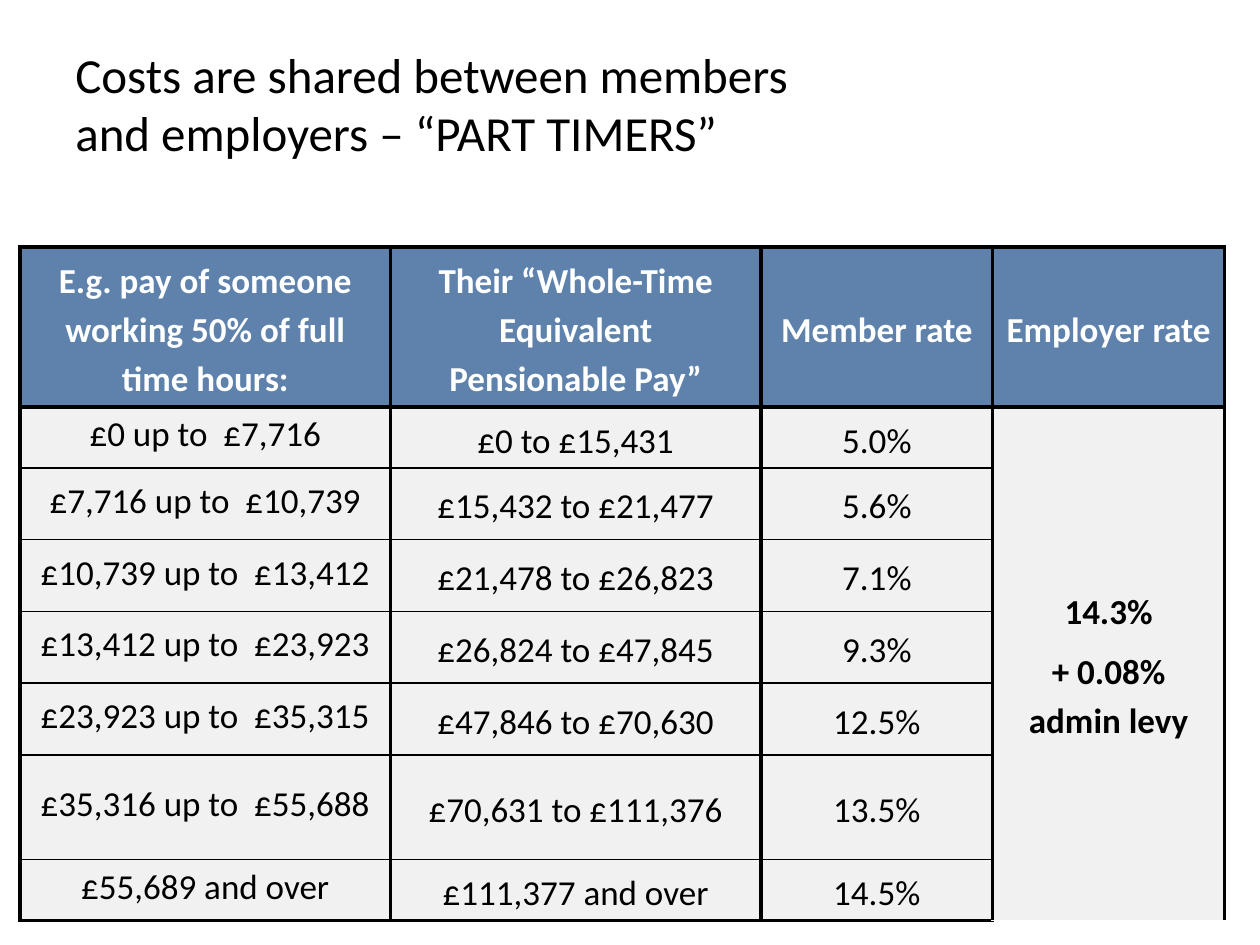
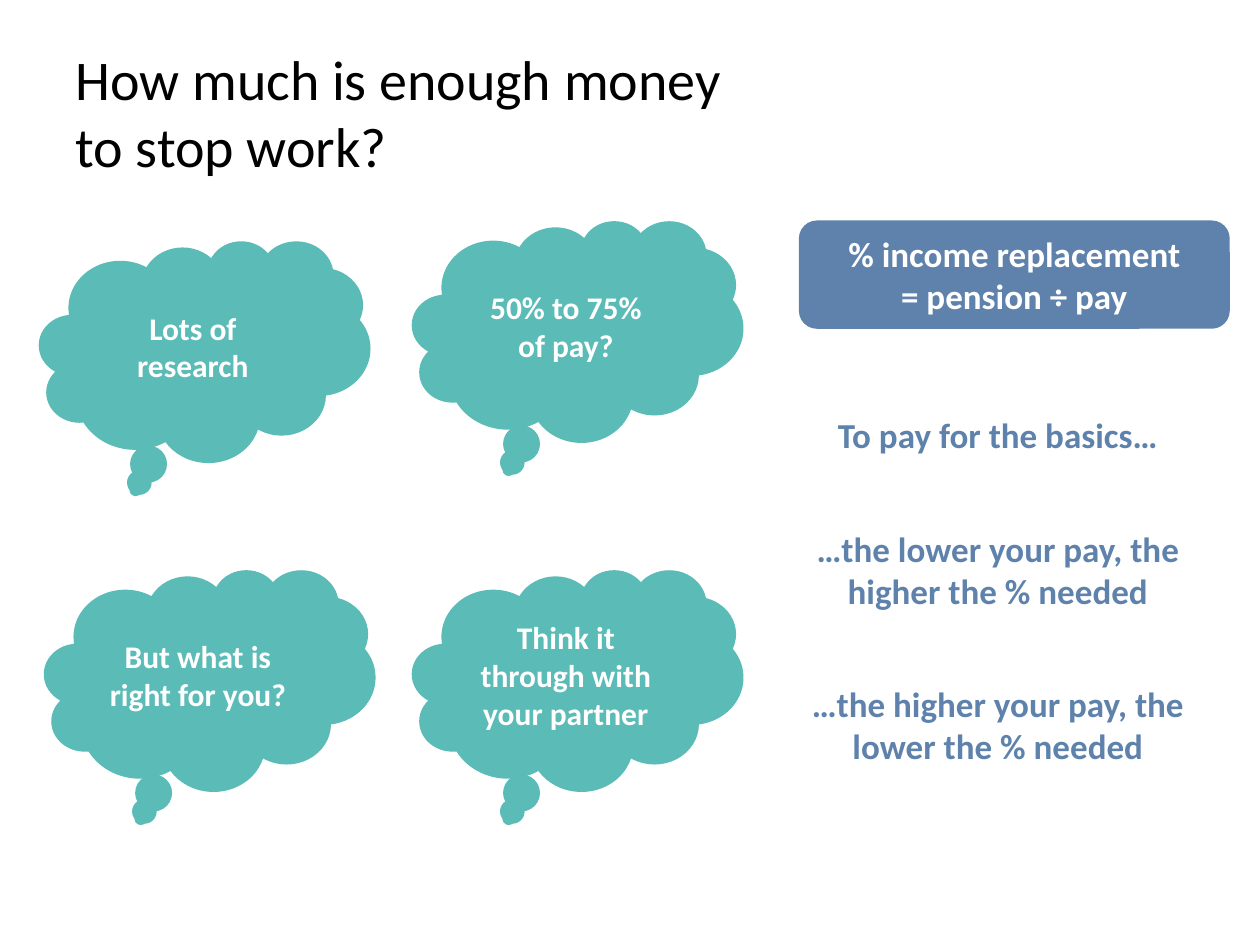
"""Two pension slides: contribution rates for part timers, and income in retirement."""
import pptx
import pptx.dml.color
import pptx.enum.shapes
import pptx.enum.text
import pptx.oxml
import pptx.oxml.ns
import pptx.util

Inches = pptx.util.Inches
Pt = pptx.util.Pt
SHAPES = pptx.enum.shapes.MSO_SHAPE
ALIGN = pptx.enum.text.PP_ALIGN
ANCHOR = pptx.enum.text.MSO_ANCHOR
FIT = pptx.enum.text.MSO_AUTO_SIZE

BLACK, WHITE, BLUE, TEAL, GREY = "000000", "FFFFFF", "5E82AB", "5BBBB7", "F1F1F1"
THIN, THICK = Pt(1), Pt(2.25)


def colour(value):
    return pptx.dml.color.RGBColor.from_string(value)


def write(frame, lines, size, ink, bold, layout):
    frame.word_wrap = True
    for index, line in enumerate(lines):
        para = frame.paragraphs[0] if index == 0 else frame.add_paragraph()
        para.text = line
        for name, value in layout.items():
            if index > 0 or name != "space_before":
                setattr(para, name, value)
        for span in para.runs:
            for name, value in {"name": "Calibri", "size": Pt(size), "bold": bold}.items():
                setattr(span.font, name, value)
            span.font.color.rgb = colour(ink)


deck = pptx.Presentation()
deck.slide_width, deck.slide_height = Inches(10), Inches(7.5)

pages = []
for title, size in [
    ("Costs are shared between members\vand employers – “PART TIMERS”", 28),
    ("How much is enough money\vto stop work?", 32),
]:
    page = deck.slides.add_slide(deck.slide_layouts[6])
    box = page.shapes.add_textbox(Inches(0.5), Inches(0.3), Inches(9), Inches(1.25))
    write(box.text_frame, [title], size, BLACK, False, {"alignment": ALIGN.LEFT})
    pages.append(page)
rates_page, income_page = pages

rates = [
    [["E.g. pay of someone working 50% of full time hours:"],
     ["Their “Whole-Time Equivalent", "Pensionable Pay”"], ["Member rate"], ["Employer rate"]],
    [["£0 up to  £7,716"], ["£0 to £15,431"], ["5.0%"], ["14.3%", "+ 0.08% admin levy"]],
    [["£7,716 up to  £10,739"], ["£15,432 to £21,477"], ["5.6%"]],
    [["£10,739 up to  £13,412"], ["£21,478 to £26,823"], ["7.1%"]],
    [["£13,412 up to  £23,923"], ["£26,824 to £47,845"], ["9.3%"]],
    [["£23,923 up to  £35,315"], ["£47,846 to £70,630"], ["12.5%"]],
    [["£35,316 up to  £55,688"], ["£70,631 to £111,376"], ["13.5%"]],
    [["£55,689 and over"], ["£111,377 and over"], ["14.5%"]],
]
widths = [2.94, 2.94, 1.84, 1.84]
heights = [1.27, 0.48] + [0.57] * 4 + [0.83, 0.48]
last = len(heights) - 1
employer = len(widths) - 1
table = rates_page.shapes.add_table(
    len(heights), len(widths), Inches(0.16), Inches(1.96),
    Inches(sum(widths)), Inches(sum(heights))).table
for column, width in zip(table.columns, widths):
    column.width = Inches(width)
for row, height in zip(table.rows, heights):
    row.height = Inches(height)
table.cell(1, employer).merge(table.cell(last, employer))

for r in range(len(heights)):
    for c in range(len(widths)):
        cell = table.cell(r, c)
        edges = {"L": THICK, "R": THICK,
                 "T": THICK if r < 2 else THIN,
                 "B": THICK if r in (0, last) else THIN}
        for side, weight in edges.items():
            if c == employer and weight == THIN:
                continue
            cell._tc.get_or_add_tcPr().append(pptx.oxml.parse_xml(
                f'<a:ln{side} {pptx.oxml.ns.nsdecls("a")} w="{weight}"><a:solidFill>'
                f'<a:srgbClr val="{BLACK}"/></a:solidFill></a:ln{side}>'))
        cell.fill.solid()
        cell.fill.fore_color.rgb = colour(GREY if r else BLUE)
        cell.vertical_anchor = ANCHOR.MIDDLE
        pay_example = r > 0 and c == 0
        inset = 0.01 if pay_example else 0.09
        for name, value in {"margin_left": inset, "margin_right": inset,
                            "margin_top": 0.01 if pay_example else 0.05,
                            "margin_bottom": 0.05}.items():
            setattr(cell, name, Inches(value))
        if c < len(rates[r]):
            layout = {"alignment": ALIGN.CENTER}
            if not pay_example:
                layout["line_spacing"] = 1.15
            if r == 1:
                layout["space_before"] = Pt(6)
            write(cell.text_frame, rates[r][c], 20, WHITE if r == 0 else BLACK,
                  r == 0 or c == employer, layout)

CLOUD, PANEL = SHAPES.CLOUD_CALLOUT, SHAPES.ROUNDED_RECTANGLE
cloud_size, panel_size = (2.63, 1.76), (3.42, 0.86)
for kind, left, top, (width, height), fill, ink, size, lines in [
    (CLOUD, 3.27, 1.75, cloud_size, TEAL, WHITE, 18, ["50% to 75%", "of pay?"]),
    (CLOUD, 0.35, 4.52, cloud_size, TEAL, WHITE, 18, ["But what is right for you?"]),
    (CLOUD, 3.27, 4.52, cloud_size, TEAL, WHITE, 18, ["Think it through with your partner"]),
    (CLOUD, 0.31, 1.91, cloud_size, TEAL, WHITE, 18, ["Lots of research"]),
    (PANEL, 6.34, 1.75, panel_size, BLUE, WHITE, 20, ["% income replacement", "= pension ÷ pay"]),
    (PANEL, 6.21, 4.09, panel_size, None, BLUE, 20, ["…the lower your pay, the higher the % needed"]),
    (PANEL, 6.21, 5.32, panel_size, None, BLUE, 20, ["…the higher your pay, the lower the % needed"]),
    (PANEL, 6.21, 3.21, (3.42, 0.48), None, BLUE, 20, ["To pay for the basics…"]),
]:
    shape = income_page.shapes.add_shape(
        kind, Inches(left), Inches(top), Inches(width), Inches(height))
    shape.shadow.inherit = False
    shape.line.fill.background()
    if fill:
        shape.fill.solid()
        shape.fill.fore_color.rgb = colour(fill)
    else:
        shape.fill.background()
    shape.text_frame.vertical_anchor = ANCHOR.MIDDLE
    if kind == PANEL:
        shape.text_frame.auto_size = FIT.SHAPE_TO_FIT_TEXT
    write(shape.text_frame, lines, size, ink, True, {"alignment": ALIGN.CENTER})

deck.save("out.pptx")
